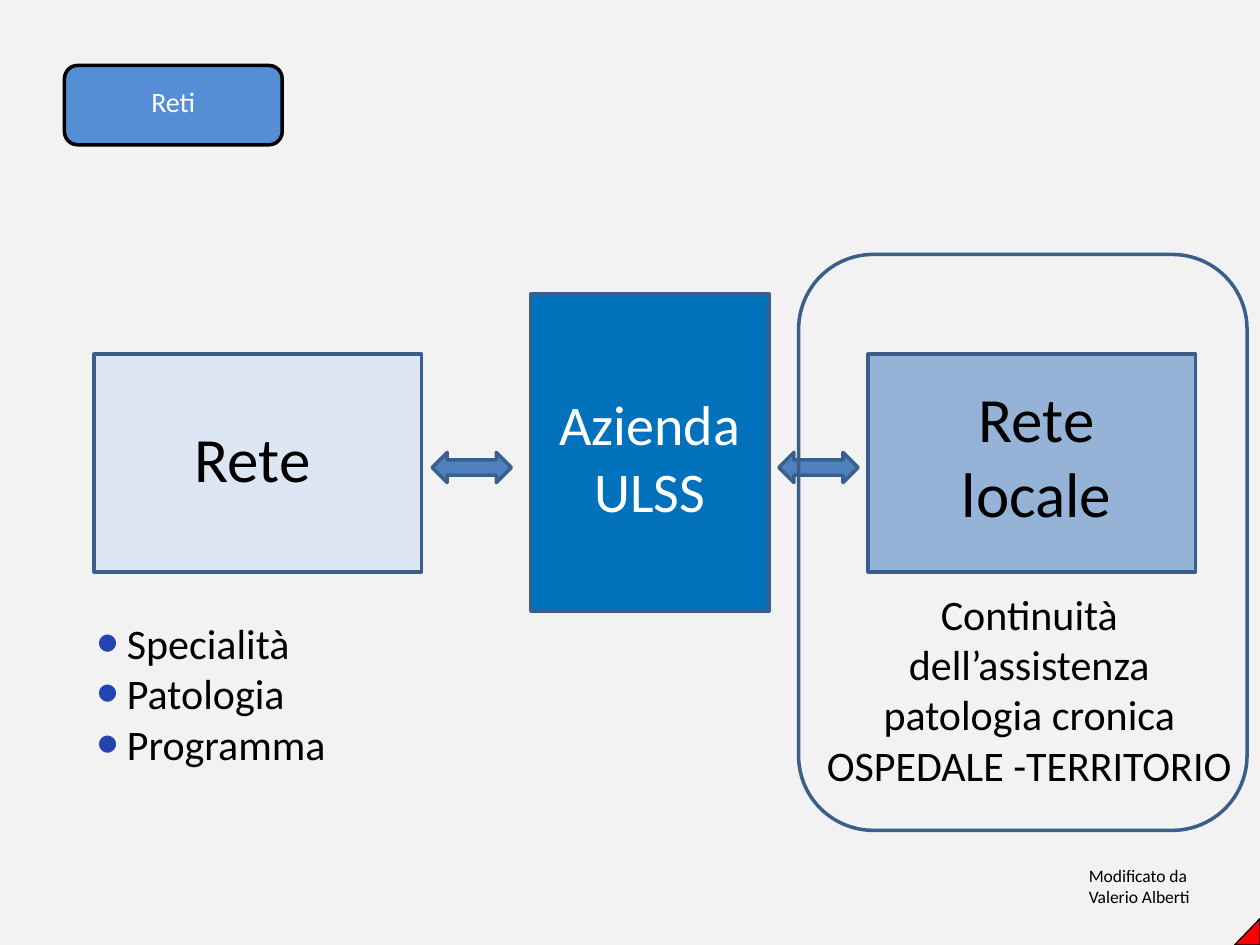
from lxml.etree import SubElement
from pptx import Presentation
from pptx.dml.color import RGBColor
from pptx.enum.shapes import MSO_SHAPE as Shape
from pptx.enum.text import MSO_AUTO_SIZE as AutoSize, PP_ALIGN as Align
from pptx.oxml.ns import qn
from pptx.util import Cm, Pt

COLOURS = {
    "background": "F2F2F2", "outline": "3A5F8C", "black": "000000",
    "white": "FFFFFF", "network": "DCE6F2", "local": "95B3D7",
    "company": "0372BD", "arrow": "4F81BD", "title": "558ED5",
    "corner": "FF0000", "bullet": "2344AF",
}
FONT = "Calibri"
BULLET_INDENT = Cm(0.61)

NETWORK_TOP, NETWORK_SIZE = 7.14, (6.6, 4.39)
ARROW_TOP, ARROW_SIZE = 9.12, (1.6, 0.61)

SHAPES = [
    (Shape.RECTANGLE, (17.5, NETWORK_TOP, *NETWORK_SIZE), "local", "outline", 2),
    (Shape.RECTANGLE, (1.9, NETWORK_TOP, *NETWORK_SIZE), "network", "outline", 2),
    (Shape.RECTANGLE, (10.7, 5.92, 4.8, 6.4), "company", "outline", 2),
    (Shape.LEFT_RIGHT_ARROW, (15.7, ARROW_TOP, *ARROW_SIZE), "arrow", "outline", 2),
    (Shape.LEFT_RIGHT_ARROW, (8.71, ARROW_TOP, *ARROW_SIZE), "arrow", "outline", 2),
    (Shape.RIGHT_TRIANGLE, (24.89, 18.52, 0.51, 0.53), "corner", "black", 0.75),
    (Shape.ROUNDED_RECTANGLE, (16.1, 5.13, 9.04, 11.61), None, "outline", 2),
    (Shape.ROUNDED_RECTANGLE, (1.3, 1.32, 4.39, 1.6), "title", "black", 2),
]

LABELS = [
    (["Reti"], (1.3, 1.57, 4.39, 0.94), 16, "white", Align.CENTER, False),
    (["Rete"], (2.9, 8.33, 4.39, 1.8), 36, "black", Align.CENTER, False),
    (["Azienda ULSS"], (10.7, 7.72, 4.8, 3), 32, "white", Align.CENTER, False),
    (["Rete locale"], (18.7, 7.52, 4.39, 3.33), 36, "black", Align.CENTER, False),
    (["Specialità", "Patologia", "Programma"],
     (1.7, 12.32, 6.8, 3.33), 24, "black", Align.LEFT, True),
    (["Continuità", "dell’assistenza", "patologia cronica", "OSPEDALE -TERRITORIO"],
     (16.3, 11.73, 8.9, 4.37), 24, "black", Align.CENTER, False),
    (["Modificato da", "Valerio Alberti"],
     (21.7, 17.32, 3.7, 1.12), 10, "black", Align.LEFT, False),
]


def colour(name):
    return RGBColor.from_string(COLOURS[name])


def add_figure(page, kind, place, fill, line, width):
    figure = page.shapes.add_shape(kind, *map(Cm, place))
    figure.shadow.inherit = False
    if fill:
        figure.fill.solid()
        figure.fill.fore_color.rgb = colour(fill)
    else:
        figure.fill.background()
    figure.line.color.rgb = colour(line)
    figure.line.width = Pt(width)
    if kind == Shape.RIGHT_TRIANGLE:
        figure._element.spPr.find(qn("a:xfrm")).set("flipH", "1")


def add_bullet(para):
    properties = para._p.get_or_add_pPr()
    properties.set("marL", str(BULLET_INDENT))
    properties.set("indent", str(-BULLET_INDENT))
    tint = SubElement(properties, qn("a:buClr"))
    SubElement(tint, qn("a:srgbClr"), val=COLOURS["bullet"])
    SubElement(properties, qn("a:buSzPct"), val="150000")
    SubElement(properties, qn("a:buFont"), typeface="Arial")
    SubElement(properties, qn("a:buChar"), char="•")


def add_label(page, lines, place, size, ink, align, bulleted):
    frame = page.shapes.add_textbox(*map(Cm, place)).text_frame
    frame.word_wrap = True
    frame.auto_size = AutoSize.SHAPE_TO_FIT_TEXT
    for index, line in enumerate(lines):
        para = frame.add_paragraph() if index else frame.paragraphs[0]
        para.alignment = align
        if bulleted:
            add_bullet(para)
        span = para.add_run()
        span.text = line
        for name, value in {"name": FONT, "size": Pt(size)}.items():
            setattr(span.font, name, value)
        span.font.color.rgb = colour(ink)


def main():
    deck = Presentation()
    deck.slide_width, deck.slide_height = Cm(25.4), Cm(19.05)
    page = deck.slides.add_slide(deck.slide_layouts[6])
    page.background.fill.solid()
    page.background.fill.fore_color.rgb = colour("background")
    for figure in SHAPES:
        add_figure(page, *figure)
    for label in LABELS:
        add_label(page, *label)
    deck.save("out.pptx")


if __name__ == "__main__":
    main()
